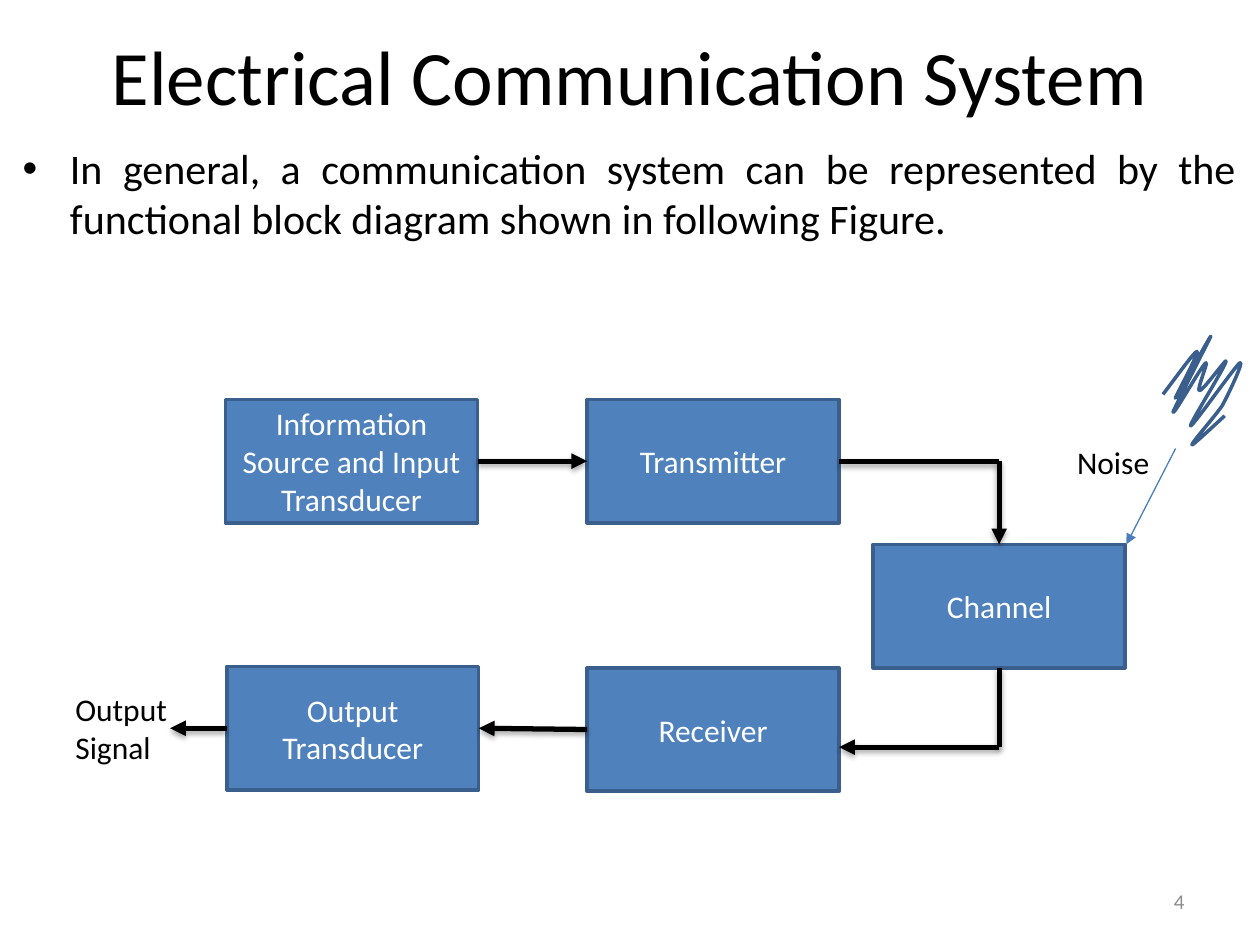
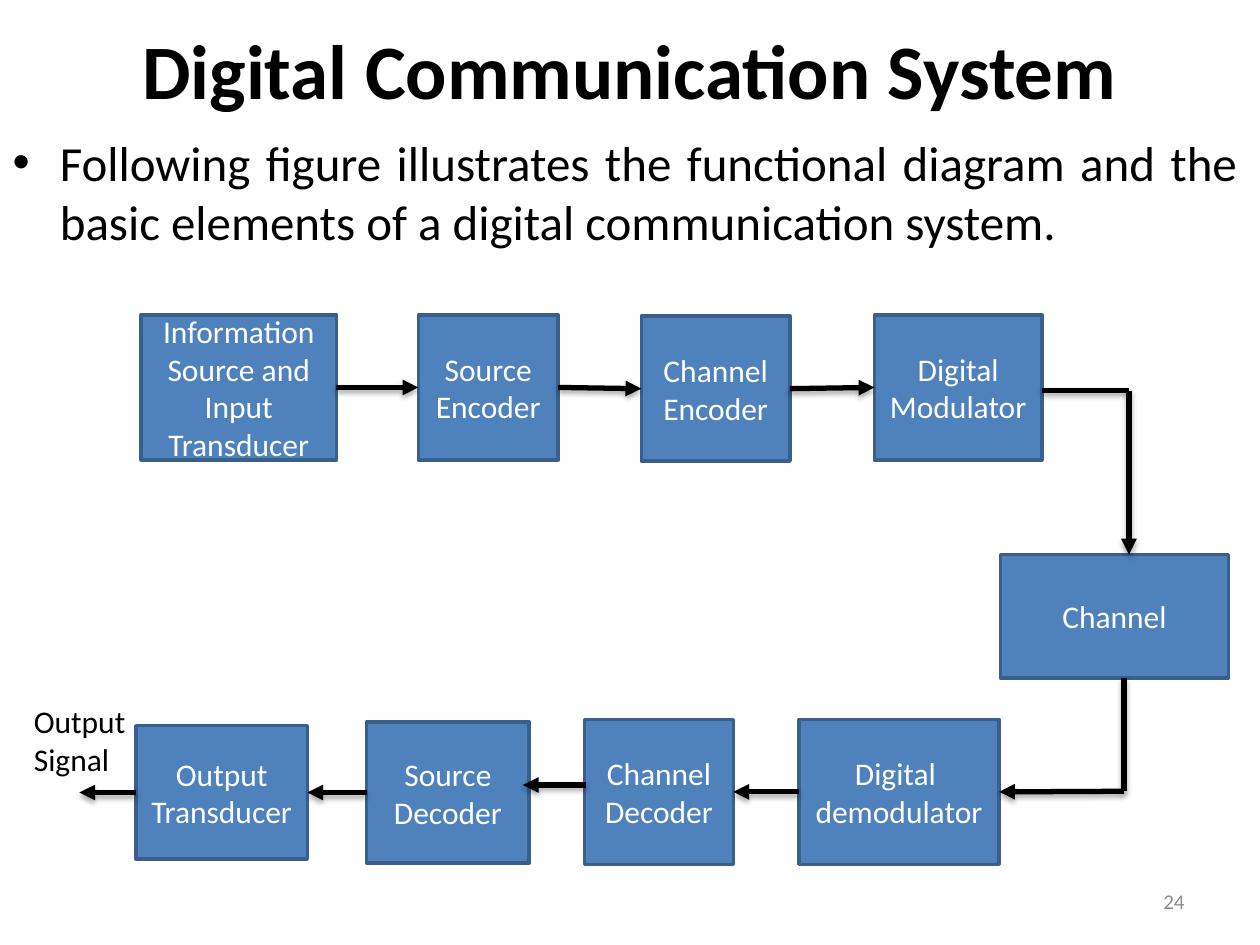
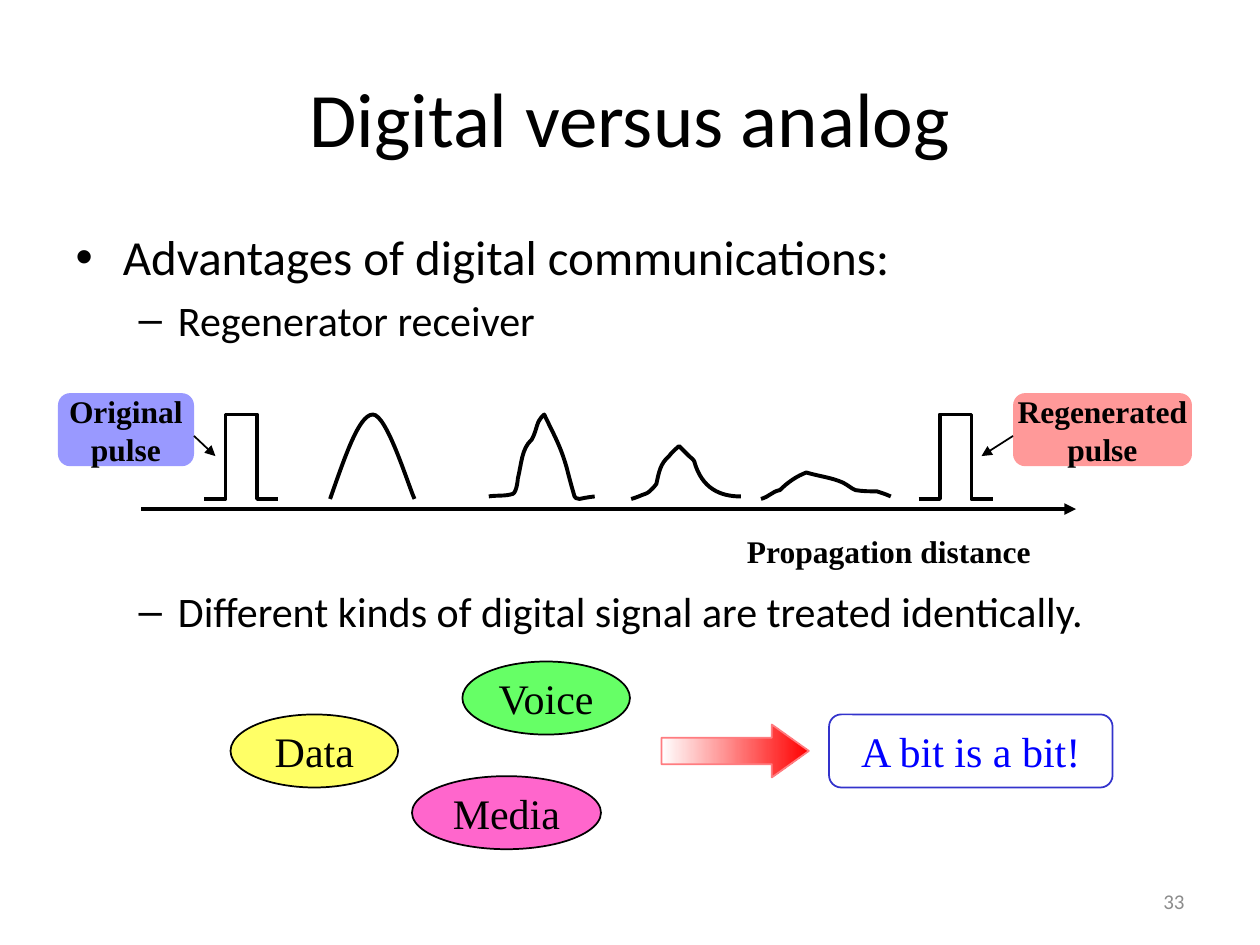
from collections import namedtuple

from lxml.etree import SubElement
from pptx import Presentation
from pptx.dml.color import RGBColor
from pptx.enum.shapes import MSO_CONNECTOR, MSO_SHAPE as SHAPE
from pptx.enum.text import MSO_ANCHOR as ANCHOR, MSO_AUTO_SIZE, PP_ALIGN as ALIGN
from pptx.oxml.ns import qn
from pptx.util import Inches, Pt

Box = namedtuple("Box", "left top width height")

# Colours and fonts
BLACK = RGBColor(0x00, 0x00, 0x00)
WHITE = RGBColor(0xFF, 0xFF, 0xFF)
GREY = RGBColor(0x8C, 0x8C, 0x8C)
BLOCK_BLUE = RGBColor(0x4F, 0x81, 0xBD)
EDGE_BLUE = RGBColor(0x3A, 0x5F, 0x8C)
NOISE_BLUE = RGBColor(0x4B, 0x7E, 0xBC)
LILAC = RGBColor(0x99, 0x99, 0xFF)
PINK = RGBColor(0xFF, 0x99, 0x99)
YELLOW = RGBColor(0xFF, 0xFF, 0x66)
GREEN = RGBColor(0x66, 0xFF, 0x66)
MAGENTA = RGBColor(0xFF, 0x66, 0xCC)
RED = RGBColor(0xFF, 0x00, 0x00)
SALMON = RGBColor(0xFF, 0x7C, 0x80)
INDIGO = RGBColor(0x33, 0x33, 0xCC)
BLUE = RGBColor(0x00, 0x00, 0xFF)
SANS, SERIF = "Calibri", "Times New Roman"

# Sides of a block where a connector can be joined
TOP, LEFT, BOTTOM, RIGHT = range(4)

# Curves: a start point, then three points for each Bézier segment
SCRIBBLE = [
    (0, 0.46), (0.13, 0.29), (0.25, 0.12), (0.27, 0.12),
    (0.29, 0.13), (0.08, 0.51), (0.1, 0.49), (0.12, 0.47), (0.38, -0.02), (0.38, 0),
    (0.37, 0.02), (0.09, 0.57), (0.08, 0.6), (0.08, 0.64), (0.3, 0.24), (0.34, 0.21),
    (0.37, 0.18), (0.26, 0.44), (0.29, 0.43), (0.32, 0.43), (0.52, 0.15), (0.5, 0.2),
    (0.49, 0.25), (0.2, 0.71), (0.22, 0.71), (0.24, 0.71), (0.57, 0.24), (0.61, 0.21),
    (0.65, 0.18), (0.53, 0.44), (0.47, 0.55), (0.4, 0.65), (0.23, 0.84), (0.23, 0.86),
    (0.23, 0.87), (0.36, 0.75), (0.49, 0.63)]
SQUARE_PULSE = [(0, 0.67), (0.17, 0.67), (0.17, 0), (0.42, 0), (0.42, 0.67), (0.59, 0.67)]
ROUNDED_PULSE = [(0, 0.67), (0.12, 0.33), (0.23, 0), (0.34, 0), (0.45, 0), (0.62, 0.56),
                 (0.67, 0.67)]
PEAKED_PULSE = [
    (0, 0.65), (0.06, 0.64), (0.13, 0.65), (0.19, 0.63),
    (0.22, 0.62), (0.23, 0.52), (0.23, 0.51), (0.26, 0.39), (0.26, 0.27), (0.34, 0.2),
    (0.39, 0.11), (0.37, 0.06), (0.44, 0), (0.52, 0.17), (0.57, 0.25), (0.62, 0.43),
    (0.64, 0.51), (0.66, 0.58), (0.68, 0.65), (0.68, 0.67), (0.7, 0.66), (0.72, 0.67),
    (0.76, 0.66), (0.84, 0.65), (0.84, 0.65)]
LOW_PULSE = [
    (0, 0.67), (0.04, 0.66), (0.08, 0.64), (0.11, 0.63),
    (0.15, 0.62), (0.2, 0.55), (0.2, 0.55), (0.22, 0.46), (0.23, 0.39), (0.3, 0.33),
    (0.32, 0.3), (0.38, 0.25), (0.38, 0.25), (0.41, 0.28), (0.43, 0.3), (0.46, 0.33),
    (0.48, 0.34), (0.5, 0.37), (0.5, 0.37), (0.56, 0.59), (0.71, 0.65), (0.87, 0.65)]
FLAT_PULSE = [
    (0, 0.67), (0.07, 0.65), (0.09, 0.61), (0.15, 0.6),
    (0.21, 0.54), (0.28, 0.49), (0.36, 0.46), (0.46, 0.49), (0.56, 0.5), (0.65, 0.54),
    (0.69, 0.56), (0.72, 0.59), (0.75, 0.6), (0.81, 0.61), (0.86, 0.61), (0.92, 0.61),
    (1.01, 0.64), (0.98, 0.63), (1.03, 0.65)]


# Shared helpers
def inside(box, left, top, width=0, height=0):
    """Turn a place relative to the box into a place on the slide."""
    return Box(box.left + left, box.top + top, width, height)


def lengths(box):
    return [Inches(value) for value in box]


def format_paragraph(paragraph, color=BLACK, alignment=None, **font_values):
    if alignment is not None:
        paragraph.alignment = alignment
    for name, value in {"name": SANS, "size": Pt(18), **font_values}.items():
        setattr(paragraph.font, name, value)
    paragraph.font.color.rgb = color


def write(shape, text, wrap=True, anchor=ANCHOR.MIDDLE, **values):
    frame = shape.text_frame
    frame.text = text
    for name, value in {"word_wrap": wrap, "vertical_anchor": anchor,
                        "auto_size": MSO_AUTO_SIZE.NONE}.items():
        setattr(frame, name, value)
    for paragraph in frame.paragraphs:
        format_paragraph(paragraph, **values)


def add_label(slide, box, text, **values):
    label = slide.shapes.add_textbox(*lengths(box))
    write(label, text, **{"anchor": ANCHOR.TOP, **values})


def style_line(line, color, width):
    line.color.rgb = color
    line.width = Pt(width)


def add_figure(slide, kind, box, text="", fill=None, line=None, line_width=1, **values):
    shape = slide.shapes.add_shape(kind, *lengths(box))
    shape.shadow.inherit = False
    if fill is None:
        shape.fill.background()
    else:
        shape.fill.solid()
        shape.fill.fore_color.rgb = fill
    if line is None:
        shape.line.fill.background()
    else:
        style_line(shape.line, line, line_width)
    if text:
        write(shape, text, alignment=ALIGN.CENTER, **values)
    return shape


def add_line(slide, box, start, end, width, color=BLACK, head=True, shadow=False):
    """Draw a line between points in the box or (block, side) joints."""
    joints = [point if hasattr(point[0], "shape_id") else None for point in (start, end)]
    places = [(0, 0) if joint else inside(box, *point)[:2]
              for joint, point in zip(joints, (start, end))]
    line = slide.shapes.add_connector(
        MSO_CONNECTOR.STRAIGHT, *[Inches(value) for place in places for value in place])
    for joint, connect in zip(joints, (line.begin_connect, line.end_connect)):
        if joint:
            connect(*joint)
    style_line(line.line, color, width)
    properties = line.element.spPr
    if head:
        SubElement(properties.find(qn("a:ln")), qn("a:tailEnd"), type="triangle")
    effects = SubElement(properties, qn("a:effectLst"))
    if shadow:
        outer = SubElement(effects, qn("a:outerShdw"), blurRad="40000", dist="23000",
                           dir="5400000", rotWithShape="0")
        black = SubElement(outer, qn("a:srgbClr"), val="000000")
        SubElement(black, qn("a:alpha"), val="35000")


def add_outline(slide, box, points, color, width, curved=True):
    places = [[Inches(value) for value in inside(box, *point)[:2]] for point in points]
    builder = slide.shapes.build_freeform(*places[0])
    builder.add_line_segments(places[1:], close=False)
    shape = builder.convert_to_shape()
    shape.shadow.inherit = False
    shape.fill.background()
    style_line(shape.line, color, width)
    if curved:
        # Turn every three straight segments into one Bézier segment
        path = next(shape.element.iter(qn("a:path")))
        segments = path.findall(qn("a:lnTo"))
        for first in range(0, len(segments), 3):
            curve = SubElement(path, qn("a:cubicBezTo"))
            for segment in segments[first:first + 3]:
                curve.append(segment[0])
                path.remove(segment)


def add_content_slide(presentation, number, title, title_box, body, body_box,
                      bold=False, alignment=None):
    """Fill title, list and number; body rows are (text, level, size, space before)."""
    slide = presentation.slides.add_slide(presentation.slide_layouts[1])
    heading, content = slide.placeholders
    for placeholder, box in ((heading, title_box), (content, body_box)):
        placeholder.left, placeholder.top, placeholder.width, placeholder.height = lengths(box)
    write(heading, title, size=Pt(44), bold=bold, alignment=ALIGN.CENTER)
    write(content, "\n".join(row[0] for row in body), anchor=ANCHOR.TOP, alignment=alignment)
    for paragraph, (_, level, size, space) in zip(content.text_frame.paragraphs, body):
        paragraph.level = level
        paragraph.font.size = Pt(size)
        if space:
            paragraph.space_before = Pt(space)
    add_label(slide, Box(7.17, 6.95, 2.33, 0.4), str(number), anchor=ANCHOR.MIDDLE,
              size=Pt(12), color=GREY, alignment=ALIGN.RIGHT)
    return slide


# Block diagrams
def add_blocks(slide, box, places):
    return {text: add_figure(slide, SHAPE.RECTANGLE, inside(box, *place), text, BLOCK_BLUE,
                             EDGE_BLUE, 2, color=WHITE)
            for text, place in places.items()}


def add_flow(slide, box, steps):
    for start, end, head in steps:
        add_line(slide, box, start, end, 3, head=head, shadow=True)


def add_electrical_diagram(slide, box):
    corners = {"Information Source and Input Transducer": (1.29, 0), "Transmitter": (4.16, 0),
               "Channel": (6.43, 1.15), "Receiver": (4.16, 2.13),
               "Output Transducer": (1.3, 2.12)}
    blocks = add_blocks(slide, box, {text: (*corner, 2, 0.98)
                                     for text, corner in corners.items()})
    source, transmitter, channel, receiver, output = blocks.values()
    upper_turn, lower_turn = (7.43, 0.49), (7.43, 2.76)
    add_flow(slide, box, [
        ((source, RIGHT), (transmitter, LEFT), True),
        ((transmitter, RIGHT), upper_turn, False),
        (upper_turn, (channel, TOP), True),
        ((channel, BOTTOM), lower_turn, False),
        (lower_turn, (6.16, 2.76), True),
        ((receiver, LEFT), (output, RIGHT), True),
        ((output, LEFT), (0.85, 2.61), True)])
    add_label(slide, inside(box, 0, 2.26, 0.96, 0.71), "Output\nSignal")


def add_noise(slide, box):
    add_line(slide, box, (0.88, 0.89), (0.49, 1.65), 0.75, NOISE_BLUE)
    add_outline(slide, inside(box, 0.78, 0), SCRIBBLE, EDGE_BLUE, 2)
    add_label(slide, inside(box, 0, 0.8, 0.78, 0.4), "Noise", wrap=False)


def add_digital_diagram(slide, box):
    blocks = add_blocks(slide, box, {
        "Information Source and Input Transducer": (0.95, 0, 1.55, 1.15),
        "Source Encoder": (3.15, 0, 1.11, 1.15),
        "Channel Encoder": (4.92, 0.01, 1.18, 1.15),
        "Digital Modulator": (6.77, 0, 1.33, 1.15),
        "Channel": (7.77, 1.9, 1.81, 0.98),
        "Digital \ndemodulator": (6.17, 3.21, 1.59, 1.15),
        "Channel Decoder": (4.47, 3.21, 1.18, 1.15),
        "Source Decoder": (2.74, 3.23, 1.29, 1.12),
        "Output Transducer": (0.91, 3.26, 1.36, 1.06)})
    (source, source_encoder, channel_encoder, modulator, _, demodulator,
     channel_decoder, source_decoder, output) = blocks.values()
    upper_turn, lower_turn = (8.79, 0.6), (8.75, 3.78)
    add_flow(slide, box, [
        ((source, RIGHT), (source_encoder, LEFT), True),
        ((source_encoder, RIGHT), (channel_encoder, LEFT), True),
        ((channel_encoder, RIGHT), (modulator, LEFT), True),
        ((8.1, 0.6), upper_turn, False),
        (upper_turn, (8.79, 1.9), True),
        ((8.75, 2.88), lower_turn, False),
        (lower_turn, (demodulator, RIGHT), True),
        ((demodulator, LEFT), (channel_decoder, RIGHT), True),
        ((4.48, 3.73), (3.98, 3.73), True),
        ((source_decoder, LEFT), (output, RIGHT), True),
        ((output, LEFT), (0.46, 3.79), True)])
    add_label(slide, inside(box, 0, 3.02, 0.95, 0.71), "Output\nSignal")


# Regenerated pulses and kinds of signal
def add_pulses(slide, box):
    bold_serif = {"name": SERIF, "bold": True, "wrap": False}
    add_line(slide, box, (0.66, 0.92), (8.08, 0.92), 2.25)
    for left, points in ((1.16, SQUARE_PULSE), (2.16, ROUNDED_PULSE), (3.42, PEAKED_PULSE),
                         (4.55, LOW_PULSE), (5.58, FLAT_PULSE), (6.83, SQUARE_PULSE)):
        add_outline(slide, inside(box, left, 0.17), points, BLACK, 2.25,
                    curved=points is not SQUARE_PULSE)
    add_label(slide, inside(box, 5.37, 1.05, 2.46, 0.4), "Propagation distance", **bold_serif)
    for text, left, width, fill, start, end in (
            ("Original\npulse", 0, 1.08, LILAC, 1.08, 1.25),
            ("Regenerated\npulse", 7.58, 1.42, PINK, 7.58, 7.33)):
        add_figure(slide, SHAPE.ROUNDED_RECTANGLE, inside(box, left, 0, width, 0.58), text,
                   fill, **bold_serif)
        add_line(slide, box, (start, 0.34), (end, 0.5), 1)


def add_signal_kinds(slide, box):
    serif = {"name": SERIF, "size": Pt(24), "wrap": False}
    for text, left, top, width, fill in (("Data", 0, 0.42, 1.33, YELLOW),
                                         ("Voice", 1.84, 0, 1.33, GREEN),
                                         ("Media", 1.44, 0.91, 1.5, MAGENTA)):
        add_figure(slide, SHAPE.OVAL, inside(box, left, top, width, 0.58), text, fill, BLACK,
                   **serif)
    arrow = add_figure(slide, SHAPE.RIGHT_ARROW, inside(box, 3.42, 0.5, 1.17, 0.42),
                       line=SALMON)
    arrow.adjustments[1] = 0.7
    arrow.fill.gradient()
    arrow.fill.gradient_angle = 0
    for stop, color in zip(arrow.fill.gradient_stops, (WHITE, RED)):
        stop.color.rgb = color
    add_figure(slide, SHAPE.ROUNDED_RECTANGLE, inside(box, 4.75, 0.42, 2.25, 0.58),
               "A bit is a bit!", line=INDIGO, color=BLUE, **serif)


def main():
    presentation = Presentation()
    presentation.slide_width, presentation.slide_height = Inches(10), Inches(7.5)

    slide = add_content_slide(
        presentation, 4, "Electrical Communication System", Box(0.5, 0.08, 9, 1.03),
        [("In general, a communication system can be represented by the functional block "
          "diagram shown in following Figure.", 0, 24, None)],
        Box(0.08, 1.08, 9.83, 4.95), alignment=ALIGN.JUSTIFY)
    add_electrical_diagram(slide, Box(0.5, 3.17, 8.43, 3.11))
    add_noise(slide, Box(8.45, 2.67, 1.4, 1.65))

    slide = add_content_slide(
        presentation, 24, "Digital Communication System", Box(0.5, 0.08, 9, 0.93),
        [("Following figure illustrates the functional diagram and the basic elements of a "
          "digital communication system.", 0, 28, None)],
        Box(0, 1, 9.92, 5.85), bold=True, alignment=ALIGN.JUSTIFY)
    add_digital_diagram(slide, Box(0.17, 2.5, 9.58, 4.36))

    slide = add_content_slide(
        presentation, 33, "Digital versus analog", Box(0.5, 0.3, 9, 1.25),
        [("Advantages of digital communications:", 0, 28, None),
         ("Regenerator receiver", 1, 24, None),
         ("Different kinds of digital signal are treated identically.", 1, 24, 138)],
        Box(0.5, 1.75, 9, 4.95))
    add_pulses(slide, Box(0.46, 3.12, 9, 1.45))
    add_signal_kinds(slide, Box(1.83, 5.25, 7, 1.5))

    presentation.save("out.pptx")


if __name__ == "__main__":
    main()
